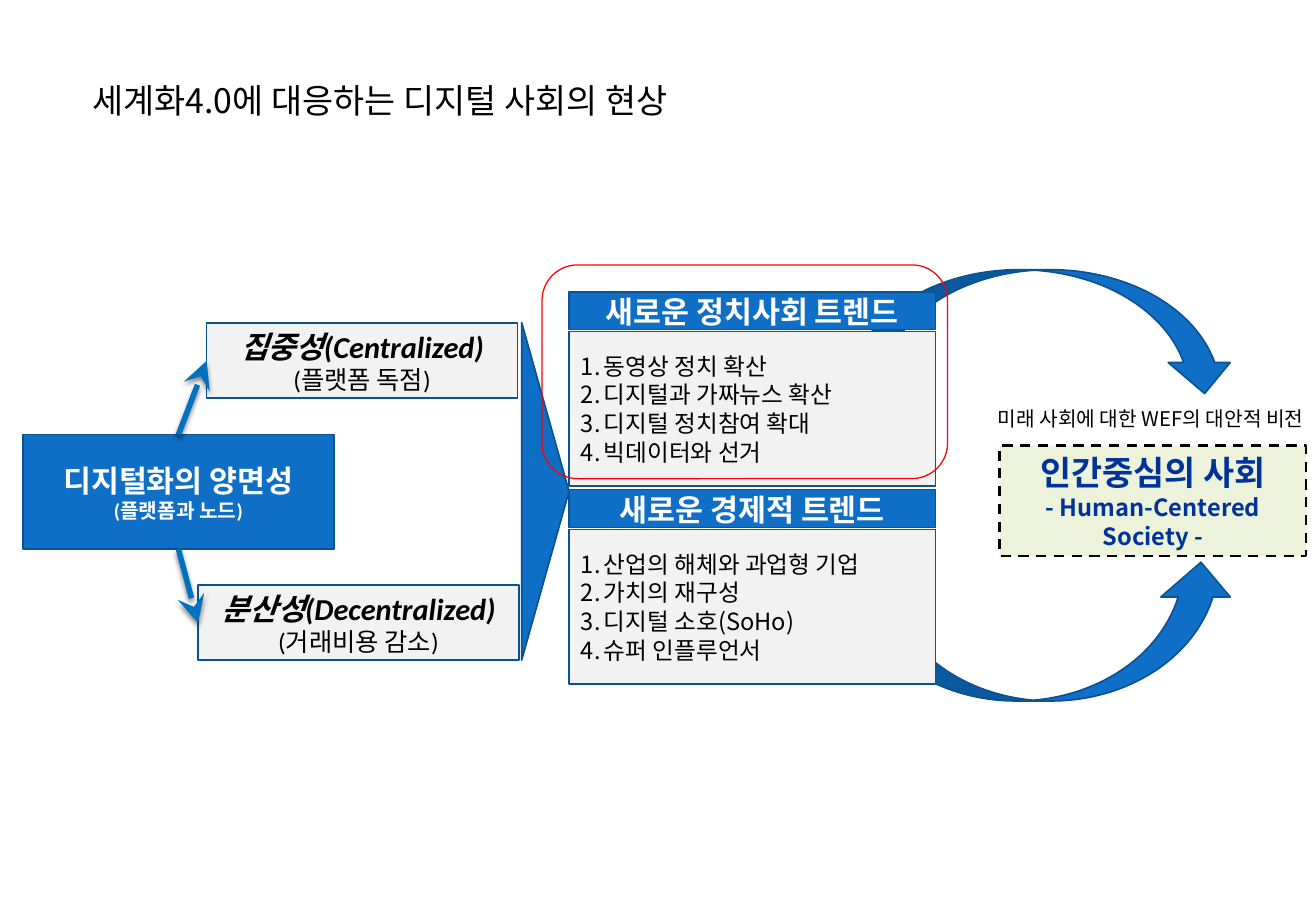
import pptx
import pptx.dml.color
import pptx.enum.dml
import pptx.enum.shapes
import pptx.enum.text
import pptx.oxml
import pptx.oxml.ns
import pptx.util
import lxml.etree

Cm = pptx.util.Cm
Pt = pptx.util.Pt
RGBColor = pptx.dml.color.RGBColor
SHAPE = pptx.enum.shapes.MSO_SHAPE
ALIGN = pptx.enum.text.PP_ALIGN
qn = pptx.oxml.ns.qn

BLUE = RGBColor(0x0F, 0x6F, 0xC6)
DARK_BLUE = RGBColor(0x0B, 0x52, 0x92)
ARROW_BLUE = RGBColor(0x00, 0x70, 0xC0)
NAVY = RGBColor(0x00, 0x33, 0x99)
PALE_GREEN = RGBColor(0xED, 0xF3, 0xDB)
PALE_GRAY = RGBColor(0xF2, 0xF2, 0xF2)
RED = RGBColor(0xFF, 0x00, 0x00)
BLACK = RGBColor(0x00, 0x00, 0x00)
WHITE = RGBColor(0xFF, 0xFF, 0xFF)

KOREAN = "Noto Sans CJK KR"
LATIN = "Calibri"

TREND_LEFT, TREND_WIDTH = 11.89, 7.67
TREND_TOP, TREND_STEP = 6.1, 4.14
HEADER_HEIGHT, LIST_OFFSET, LIST_HEIGHT = 0.79, 0.83, 3.23

TRENDS = [
    ("새로운 정치사회 트렌드",
     ["동영상 정치 확산", "디지털과 가짜뉴스 확산", "디지털 정치참여 확대", "빅데이터와 선거"]),
    ("새로운 경제적 트렌드",
     ["산업의 해체와 과업형 기업", "가치의 재구성", "디지털 소호(SoHo)", "슈퍼 인플루언서"]),
]


def place(shape, left, top, width, height):
    shape.left, shape.top = Cm(left), Cm(top)
    shape.width, shape.height = Cm(width), Cm(height)


def bring_to_front(shape):
    shape.element.getparent().append(shape.element)


def style_shape(shape, fill, line=DARK_BLUE, line_width=1):
    shape.shadow.inherit = False
    if fill is None:
        shape.fill.background()
    else:
        shape.fill.solid()
        shape.fill.fore_color.rgb = fill
    shape.line.color.rgb = line
    shape.line.width = Pt(line_width)


def add_block(slide, kind, box, fill=BLUE, line=DARK_BLUE, line_width=1):
    shape = slide.shapes.add_shape(kind, *map(Cm, box))
    style_shape(shape, fill, line, line_width)
    return shape


def prepare_frame(shape):
    frame = shape.text_frame
    frame.word_wrap = True
    frame.auto_size = pptx.enum.text.MSO_AUTO_SIZE.NONE
    frame.vertical_anchor = pptx.enum.text.MSO_ANCHOR.MIDDLE
    return frame


def number_paragraph(paragraph):
    properties = paragraph._p.get_or_add_pPr()
    properties.set("marL", str(Cm(0.48)))
    properties.set("indent", str(-Cm(0.48)))
    lxml.etree.SubElement(properties, qn("a:buFont"), typeface="+mj-lt")
    lxml.etree.SubElement(properties, qn("a:buAutoNum"), type="arabicPeriod")


def write_line(frame, index, text, size, color=BLACK, font=KOREAN, bold=False,
               italic=False, align=ALIGN.CENTER, numbered=False):
    paragraph = frame.paragraphs[0] if index == 0 else frame.add_paragraph()
    if numbered:
        number_paragraph(paragraph)
    paragraph.alignment = align
    paragraph.space_before = Pt(0)
    paragraph.line_spacing = Pt(round(size * 1.2))
    run = paragraph.add_run()
    run.text = text
    run.font.size = Pt(size)
    run.font.bold = bold
    run.font.italic = italic
    run.font.color.rgb = color
    run.font.name = font
    lxml.etree.SubElement(run._r.get_or_add_rPr(), qn("a:ea"), typeface=KOREAN)


def add_aspect(slide, box, name, effect):
    shape = add_block(slide, SHAPE.RECTANGLE, box, PALE_GRAY)
    frame = prepare_frame(shape)
    write_line(frame, 0, name, 18, font=LATIN, bold=True, italic=True)
    write_line(frame, 1, effect, 15, font=LATIN)
    return shape


def add_trend(slide, placeholder, top, heading, items):
    header = add_block(slide, SHAPE.RECTANGLE,
                       (TREND_LEFT, top, TREND_WIDTH, HEADER_HEIGHT))
    write_line(prepare_frame(header), 0, heading, 18, WHITE, bold=True)
    place(placeholder, TREND_LEFT, top + LIST_OFFSET, TREND_WIDTH, LIST_HEIGHT)
    style_shape(placeholder, PALE_GRAY)
    bring_to_front(placeholder)
    frame = prepare_frame(placeholder)
    for index, item in enumerate(items):
        write_line(frame, index, item, 14, align=ALIGN.LEFT, numbered=True)


def add_arrow(slide, source, target):
    arrow = slide.shapes.add_connector(
        pptx.enum.shapes.MSO_CONNECTOR.STRAIGHT, 0, 0, 0, 0)
    arrow.begin_connect(source, 0 if target.top < source.top else 2)
    arrow.end_connect(target, 1)
    arrow.line.color.rgb = ARROW_BLUE
    arrow.line.width = Pt(3.25)
    lxml.etree.SubElement(arrow.line._get_or_add_ln(), qn("a:tailEnd"),
                          type="stealth", w="lg", len="lg")
    effects = lxml.etree.SubElement(arrow.element.spPr, qn("a:effectLst"))
    shadow = lxml.etree.SubElement(
        effects, qn("a:outerShdw"), blurRad=str(Pt(3)), dist=str(Pt(2)),
        dir="5400000", rotWithShape="0")
    color = lxml.etree.SubElement(shadow, qn("a:srgbClr"), val=str(BLACK))
    lxml.etree.SubElement(color, qn("a:alpha"), val="50000")


def add_flow_shapes(slide):
    triangle = add_block(slide, SHAPE.ISOSCELES_TRIANGLE, (7.87, 9.78, 7.06, 0.99))
    triangle.rotation = 90
    lower = add_block(slide, SHAPE.CURVED_DOWN_ARROW, (17.75, 11.76, 8.08, 2.9))
    lower.element.spPr.find(qn("a:xfrm")).set("flipV", "1")
    add_block(slide, SHAPE.CURVED_DOWN_ARROW, (17.75, 5.64, 8.08, 2.59))


def add_vision(slide):
    vision = add_block(slide, SHAPE.RECTANGLE, (20.9, 9.32, 6.4, 2.31),
                       PALE_GREEN, BLACK, 1.5)
    vision.line.dash_style = pptx.enum.dml.MSO_LINE.DASH
    frame = prepare_frame(vision)
    write_line(frame, 0, "인간중심의 사회", 20, NAVY, bold=True)
    write_line(frame, 1, "- Human-Centered Society -", 14, NAVY, bold=True)
    caption = slide.shapes.add_textbox(Cm(20.6), Cm(8.38), Cm(6.91), Cm(0.76))
    frame = prepare_frame(caption)
    frame.margin_left = frame.margin_right = 0
    write_line(frame, 0, "미래 사회에 대한 WEF의 대안적 비전", 12)


def add_two_sides(slide):
    digital = add_block(slide, SHAPE.RECTANGLE, (0.48, 9.09, 6.5, 2.39))
    frame = prepare_frame(digital)
    write_line(frame, 0, "디지털화의 양면성", 18, WHITE, bold=True)
    write_line(frame, 1, "(플랫폼과 노드)", 12, WHITE, LATIN, bold=True)
    central = add_aspect(slide, (4.32, 6.76, 6.5, 1.57),
                         "집중성(Centralized)", "(플랫폼 독점)")
    decentral = add_aspect(slide, (4.14, 12.24, 6.71, 1.57),
                           "분산성(Decentralized)", "(거래비용 감소)")
    for aspect in (central, decentral):
        add_arrow(slide, digital, aspect)


def main():
    presentation = pptx.Presentation()
    presentation.slide_width, presentation.slide_height = Cm(27.51), Cm(19.05)
    slide = presentation.slides.add_slide(presentation.slide_layouts[3])
    title, *lists = slide.placeholders
    place(title, 1.68, 0.71, 17.22, 2.77)
    write_line(prepare_frame(title), 0, "세계화4.0에 대응하는 디지털 사회의 현상",
               20, align=ALIGN.LEFT)
    add_flow_shapes(slide)
    add_vision(slide)
    add_two_sides(slide)
    for index, (heading, items) in enumerate(TRENDS):
        add_trend(slide, lists[index], TREND_TOP + index * TREND_STEP, heading, items)
    add_block(slide, SHAPE.ROUNDED_RECTANGLE, (11.33, 5.54, 8.48, 4.47),
              None, RED, 0.75)
    presentation.save("out.pptx")


if __name__ == "__main__":
    main()
